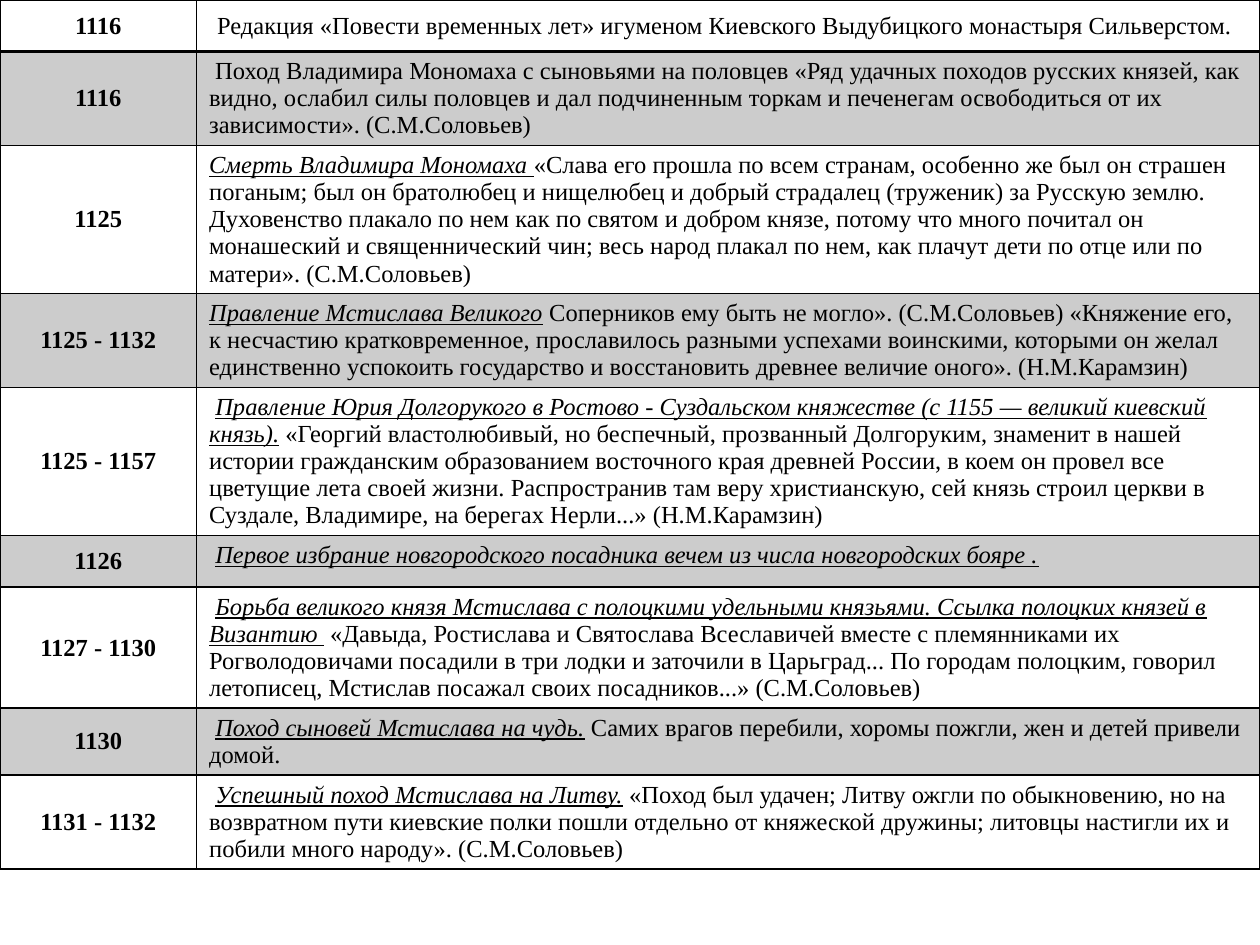
"""Builds a slide with a table of dates from 1116 to 1132."""
from lxml import etree
from pptx import Presentation
from pptx.dml.color import RGBColor
from pptx.enum.text import MSO_ANCHOR, PP_ALIGN
from pptx.oxml.ns import qn
from pptx.util import Inches, Pt

MIDDLE, TOP = MSO_ANCHOR.MIDDLE, MSO_ANCHOR.TOP
CENTER, LEFT = PP_ALIGN.CENTER, PP_ALIGN.LEFT
BLACK = RGBColor(0, 0, 0)
FONT = "Times New Roman"
SHADE = 20
COLS = (1.56, 8.44)
HIGH = 0.41

ROWS = [
    ("1116", " ", "",
     "Редакция «Повести временных лет» игуменом Киевского Выдубицкого монастыря Сильверстом."),
    ("1116", " ", "",
     "Поход Владимира Мономаха с сыновьями на половцев «Ряд удачных походов русских князей, "
     "как видно, ослабил силы половцев и дал подчиненным торкам и печенегам освободиться от их "
     "зависимости». (С.М.Соловьев)"),
    ("1125", "", "Смерть Владимира Мономаха ",
     "«Слава его прошла по всем странам, особенно же был он страшен поганым; был он братолюбец "
     "и нищелюбец и добрый страдалец (труженик) за Русскую землю. Духовенство плакало по нем как "
     "по святом и добром князе, потому что много почитал он монашеский и священнический чин; "
     "весь народ плакал по нем, как плачут дети по отце или по матери». (С.М.Соловьев)"),
    ("1125 - 1132", "", "Правление Мстислава Великого",
     " Соперников ему быть не могло». (С.М.Соловьев) «Княжение его, к несчастию "
     "кратковременное, прославилось разными успехами воинскими, которыми он желал единственно "
     "успокоить государство и восстановить древнее величие оного». (Н.М.Карамзин)"),
    ("1125 - 1157", " ",
     "Правление Юрия Долгорукого в Ростово - Суздальском княжестве (с 1155 — великий киевский "
     "князь).",
     " «Георгий властолюбивый, но беспечный, прозванный Долгоруким, знаменит в нашей истории "
     "гражданским образованием восточного края древней России, в коем он провел все цветущие "
     "лета своей жизни. Распространив там веру христианскую, сей князь строил церкви в Суздале, "
     "Владимире, на берегах Нерли...» (Н.М.Карамзин)"),
    ("1126", " ",
     "Первое избрание новгородского посадника вечем из числа новгородских бояре .", ""),
    ("1127 - 1130", " ",
     "Борьба великого князя Мстислава с полоцкими удельными князьями. Ссылка полоцких князей в "
     "Византию ",
     " «Давыда, Ростислава и Святослава Всеславичей вместе с племянниками их Рогволодовичами "
     "посадили в три лодки и заточили в Царьград... По городам полоцким, говорил летописец, "
     "Мстислав посажал своих посадников...» (С.М.Соловьев)"),
    ("1130", " ", "Поход сыновей Мстислава на чудь.",
     " Самих врагов перебили, хоромы пожгли, жен и детей привели домой."),
    ("1131 - 1132", " ", "Успешный поход Мстислава на Литву.",
     " «Поход был удачен; Литву ожгли по обыкновению, но на возвратном пути киевские полки "
     "пошли отдельно от княжеской дружины; литовцы настигли их и побили много народу». "
     "(С.М.Соловьев)"),
]


def write(para, text, size=14, bold=False, slant=False):
    if not text:
        return
    run = para.add_run()
    run.text = text
    font = run.font
    font.name, font.size = FONT, Pt(size)
    font.bold, font.italic, font.underline = bold, slant, slant
    font.color.rgb = BLACK


class Deck:
    def __init__(self):
        self.prs = Presentation()
        self.prs.slide_width, self.prs.slide_height = Inches(10), Inches(7.5)
        self.slide = self.prs.slides.add_slide(self.prs.slide_layouts[6])

    def edge(self, cell, side, width):
        line = etree.SubElement(cell._tc.get_or_add_tcPr(), qn("a:ln" + side), w=str(Pt(width)))
        fill = etree.SubElement(line, qn("a:solidFill"))
        etree.SubElement(fill, qn("a:srgbClr"), val=str(BLACK))

    def cell(self, cell, row, anchor, align):
        cell.vertical_anchor = anchor
        for side in "LRTB":
            thick = (row, side) in ((0, "B"), (1, "T"))
            self.edge(cell, side, 2 if thick else 1)
        if row % 2:
            cell.fill.solid()
            cell.fill.fore_color.rgb = BLACK
            tint = cell._tc.tcPr.find(qn("a:solidFill")).find(qn("a:srgbClr"))
            etree.SubElement(tint, qn("a:alpha"), val=str(SHADE * 1000))
        else:
            cell.fill.background()
        para = cell.text_frame.paragraphs[0]
        para.alignment = align
        return para

    def table(self, rows):
        frame = self.slide.shapes.add_table(
            len(rows), len(COLS), 0, 0, Inches(sum(COLS)), Inches(HIGH * len(rows)))
        grid = frame.table
        grid.first_row = grid.horz_banding = False
        for col, width in zip(grid.columns, COLS):
            col.width = Inches(width)
        for i, (date, gap, title, body) in enumerate(rows):
            grid.rows[i].height = Inches(HIGH)
            write(self.cell(grid.cell(i, 0), i, MIDDLE, CENTER), date, bold=True)
            para = self.cell(grid.cell(i, 1), i, TOP, LEFT)
            write(para, gap, size=14 if i else 18)
            write(para, title, slant=True)
            write(para, body)
        frame.height = Inches(7.34)


def main():
    deck = Deck()
    deck.table(ROWS)
    deck.prs.save("out.pptx")


if __name__ == "__main__":
    main()
